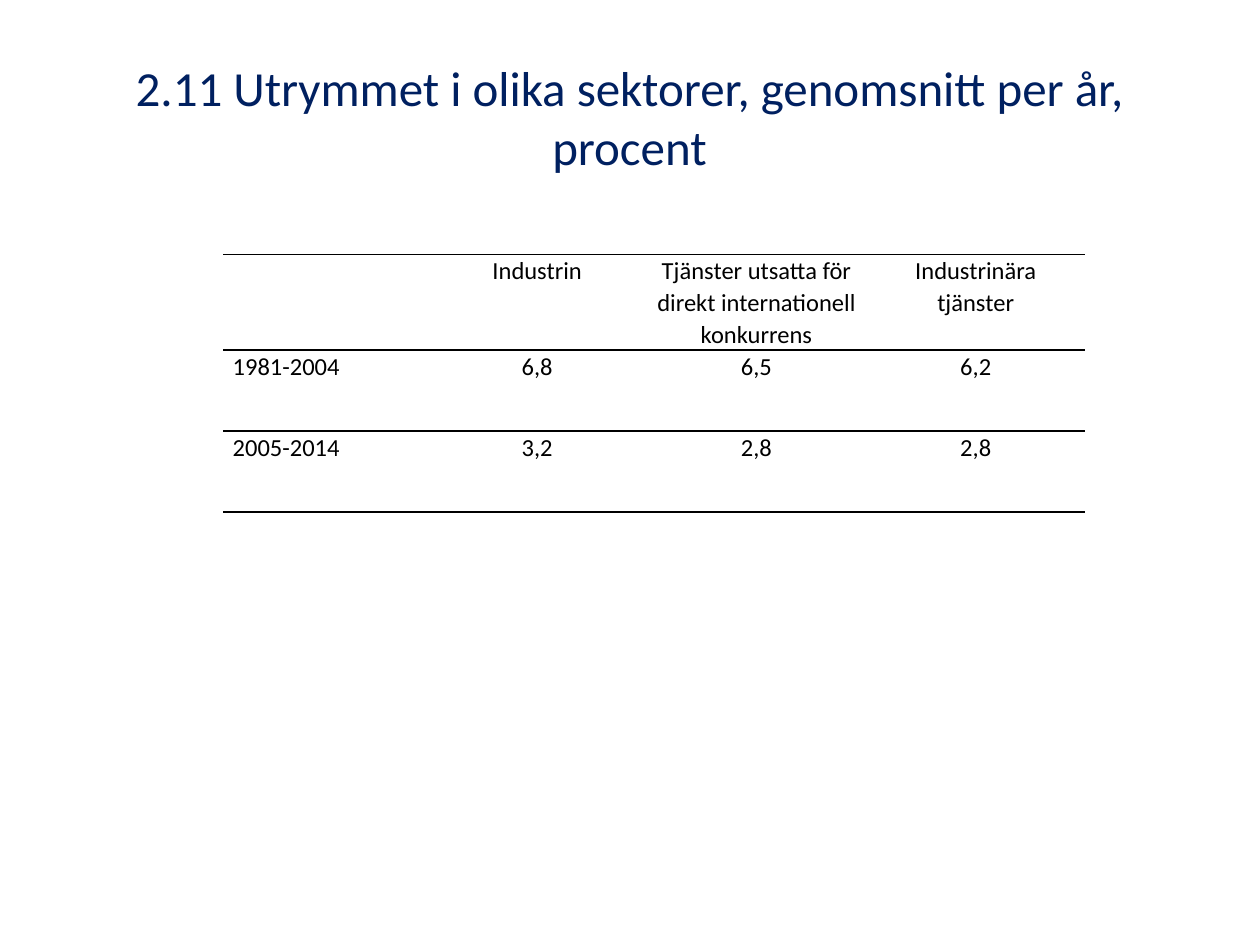
import pptx
import pptx.dml.color
import pptx.enum.text
import pptx.oxml.ns
import pptx.util
from lxml import etree
from pptx.util import Cm, Pt

COLORS = {"title": "002060", "text": "000000", "rule": "000000"}
NO_GRID_STYLE = "{2D5ABB26-0587-4C30-8999-92F81FD0307C}"
qn = pptx.oxml.ns.qn
CENTER = pptx.enum.text.PP_ALIGN.CENTER


def set_font(paragraph, size, color):
    paragraph.font.name = "Calibri"
    paragraph.font.size = Pt(size)
    paragraph.font.color.rgb = pptx.dml.color.RGBColor.from_string(COLORS[color])


def add_rules(cell, sides):
    """Draw 1 pt rules on the given sides, listed in schema order (lnT, lnB)."""
    properties = cell._tc.get_or_add_tcPr()
    for position, side in enumerate(sides):
        line = etree.Element(qn("a:" + side), w=str(Pt(1)))
        fill = etree.SubElement(line, qn("a:solidFill"))
        etree.SubElement(fill, qn("a:srgbClr"), val=COLORS["rule"])
        properties.insert(position, line)


presentation = pptx.Presentation()
presentation.slide_width = Cm(25.4)
presentation.slide_height = Cm(19.05)
slide = presentation.slides.add_slide(presentation.slide_layouts[5])

title = slide.shapes.title
title.left, title.top, title.width, title.height = Cm(1.27), Cm(0.76), Cm(22.84), Cm(3.18)
title.text_frame.text = "2.11 Utrymmet i olika sektorer, genomsnitt per år, procent"
title.text_frame.vertical_anchor = pptx.enum.text.MSO_ANCHOR.MIDDLE
title.text_frame.paragraphs[0].alignment = CENTER
set_font(title.text_frame.paragraphs[0], 28, "title")

sector_rows = [
    ["", "Industrin", "Tjänster utsatta för direkt internationell konkurrens",
     "Industrinära tjänster"],
    ["1981-2004", "6,8", "6,5", "6,2"],
    ["2005-2014", "3,2", "2,8", "2,8"],
]
row_heights = [1.93, 1.63, 1.63]
column_widths = [4.12, 4.42, 4.42, 4.42]
row_rules = [["lnT", "lnB"], ["lnT"], ["lnB"]]

sectors = slide.shapes.add_table(
    len(sector_rows), len(column_widths), Cm(4.5), Cm(5.13),
    Cm(sum(column_widths)), Cm(sum(row_heights))).table
sectors.first_row = False
sectors.horz_banding = False
sectors._tbl.tblPr.find(qn("a:tableStyleId")).text = NO_GRID_STYLE
for column, width in zip(sectors.columns, column_widths):
    column.width = Cm(width)

for row, height, texts, rules in zip(sectors.rows, row_heights, sector_rows, row_rules):
    row.height = Cm(height)
    for index, (cell, text) in enumerate(zip(row.cells, texts)):
        cell.fill.background()
        cell.margin_left = cell.margin_right = Cm(0.19)
        cell.margin_top = cell.margin_bottom = 0
        add_rules(cell, rules)
        cell.text = text
        paragraph = cell.text_frame.paragraphs[0]
        paragraph.line_spacing = 1.07
        paragraph.space_after = Pt(8)
        if index > 0:
            paragraph.alignment = CENTER
        set_font(paragraph, 14, "text")

presentation.save("out.pptx")
